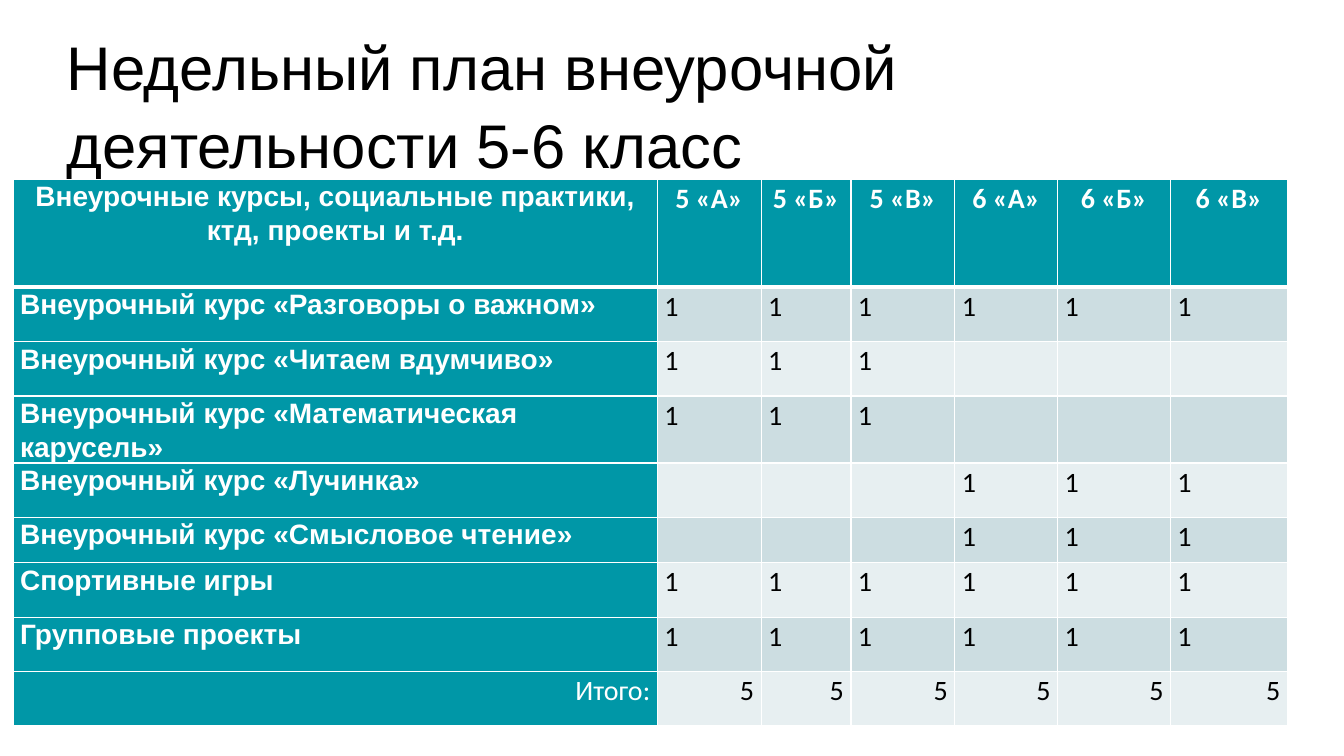
import pptx
import pptx.dml.color
import pptx.enum.text
import pptx.util
from pptx.oxml import parse_xml
from pptx.oxml.ns import nsdecls

Inches = pptx.util.Inches
Pt = pptx.util.Pt
Align = pptx.enum.text.PP_ALIGN
Anchor = pptx.enum.text.MSO_ANCHOR


def color(code):
    return pptx.dml.color.RGBColor.from_string(code)


class Page:
    head = "Arial"
    body = "Calibri"
    teal = "0097A7"
    white = "FFFFFF"
    black = "000000"
    bands = ("E7EFF1", "CCDDE1")

    def __init__(self, deck):
        self.slide = deck.slides.add_slide(deck.slide_layouts[5])

    def font(self, para, name, size, code, bold=False):
        font = para.font
        font.name, font.size, font.bold = name, Pt(size), bold
        font.color.rgb = color(code)

    def title(self, text, left, top, width, height):
        shape = self.slide.shapes.title
        shape.left, shape.top = Inches(left), Inches(top)
        shape.width, shape.height = Inches(width), Inches(height)
        frame = shape.text_frame
        frame.text = text
        frame.word_wrap = True
        frame.auto_size = pptx.enum.text.MSO_AUTO_SIZE.NONE
        frame.vertical_anchor = Anchor.TOP
        para = frame.paragraphs[0]
        para.alignment = Align.LEFT
        para.line_spacing = 1.05
        self.font(para, self.head, 44, self.black)

    def border(self, cell, side, width):
        line = parse_xml(
            f'<a:{side} {nsdecls("a")} w="{Pt(width)}"><a:solidFill>'
            f'<a:srgbClr val="{self.white}"/></a:solidFill></a:{side}>')
        cell._tc.get_or_add_tcPr().append(line)

    def cell(self, cell, text, fill, name, code, bold, align, base):
        # Borders come before the fill in the cell properties
        for side in ("lnL", "lnR", "lnT"):
            self.border(cell, side, 1)
        self.border(cell, "lnB", base)
        cell.fill.solid()
        cell.fill.fore_color.rgb = color(fill)
        cell.margin_left = cell.margin_right = Inches(0.07)
        cell.margin_top = cell.margin_bottom = 0
        cell.text = text
        para = cell.text_frame.paragraphs[0]
        para.alignment = align
        para.line_spacing = 1.07
        para.space_after = Pt(8)
        self.font(para, name, 20, code, bold)

    def table(self, rows, left, top, widths, heights):
        frame = self.slide.shapes.add_table(
            len(rows), len(widths), Inches(left), Inches(top),
            Inches(sum(widths)), Inches(sum(heights)))
        table = frame.table
        table.horz_banding = False
        for col, width in zip(table.columns, widths):
            col.width = Inches(width)
        for row, height in zip(table.rows, heights):
            row.height = Inches(height)
        last = len(rows) - 1
        for r, row in enumerate(rows):
            align = {0: Align.CENTER, last: Align.RIGHT}.get(r, Align.LEFT)
            for c, text in enumerate(row):
                dark = r == 0 or c == 0
                self.cell(
                    table.cell(r, c), text,
                    fill=self.teal if dark else self.bands[r % 2],
                    name=self.head if c == 0 and r < last else self.body,
                    code=self.white if dark else self.black,
                    bold=dark and r < last,
                    align=align, base=3 if r == 0 else 1)


def main():
    deck = pptx.Presentation()
    deck.slide_width, deck.slide_height = Inches(13.33), Inches(7.5)
    page = Page(deck)

    # Title
    page.title("Недельный план внеурочной деятельности 5-6 класс",
               0.56, 0.2, 8.53, 1.58)

    # Weekly hours: grade 5 classes, then grade 6 classes
    five, six = ["1"] * 3 + [""] * 3, [""] * 3 + ["1"] * 3
    both = ["1"] * 6
    rows = [
        ["Внеурочные курсы, социальные практики, ктд, проекты и т.д."]
        + [f"{grade} «{mark}»" for grade in (5, 6) for mark in "АБВ"],
        ["Внеурочный курс «Разговоры о важном»"] + both,
        ["Внеурочный курс «Читаем вдумчиво»"] + five,
        ["Внеурочный курс «Математическая карусель»"] + five,
        ["Внеурочный курс «Лучинка»"] + six,
        ["Внеурочный курс «Смысловое чтение»"] + six,
        ["Спортивные игры"] + both,
        ["Групповые проекты"] + both,
        ["Итого:"] + ["5"] * 6,
    ]
    widths = [6.39, 1.03, 0.89, 1.03, 1.02, 1.12, 1.16]
    heights = [1.07] + [0.54] * 4 + [0.45] + [0.54] * 3
    page.table(rows, 0.13, 1.78, widths, heights)

    deck.save("out.pptx")


if __name__ == "__main__":
    main()
